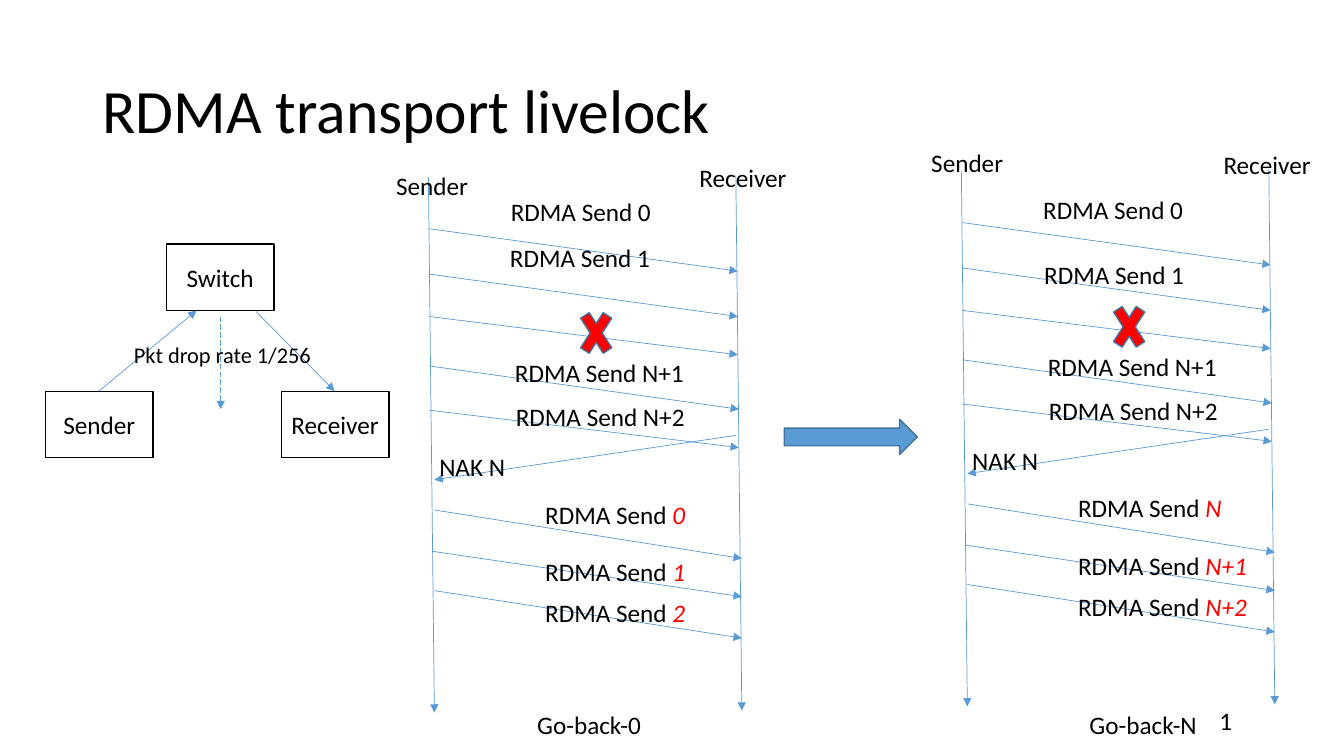
from lxml import etree
from pptx import Presentation
from pptx.dml.color import RGBColor
from pptx.enum.dml import MSO_LINE
from pptx.enum.shapes import MSO_CONNECTOR, MSO_SHAPE
from pptx.enum.text import MSO_ANCHOR, MSO_AUTO_SIZE, PP_ALIGN
from pptx.oxml.ns import qn
from pptx.util import Pt

BLUE = RGBColor(0x5B, 0x9B, 0xD5)
NAVY = RGBColor(0x43, 0x73, 0x9E)
RED = RGBColor(0xFF, 0, 0)
BLACK = RGBColor(0, 0, 0)
WHITE = RGBColor(0xFF, 0xFF, 0xFF)
STRAIGHT = MSO_CONNECTOR.STRAIGHT
RECT, CROSS, ARROW = MSO_SHAPE.RECTANGLE, MSO_SHAPE.MATH_MULTIPLY, MSO_SHAPE.RIGHT_ARROW
MIDDLE, CENTER = MSO_ANCHOR.MIDDLE, PP_ALIGN.CENTER
GROW, DASH = MSO_AUTO_SIZE.SHAPE_TO_FIT_TEXT, MSO_LINE.LONG_DASH
FONT = "Calibri"


def add_label(shapes, left, top, width, text, value="", size=18):
    """Add a one-line label; value follows the text in red italics."""
    box = shapes.add_textbox(Pt(left), Pt(top), Pt(width), Pt(28.8))
    frame = box.text_frame
    frame.word_wrap = False
    frame.auto_size = GROW
    line = frame.paragraphs[0]
    line.font.name, line.font.size = FONT, Pt(size)
    line.font.color.rgb = BLACK
    for part, color in ((text, BLACK), (value, RED)):
        if part:
            run = line.add_run()
            run.text = part
            run.font.name, run.font.size = FONT, Pt(size)
            run.font.color.rgb = color
            run.font.italic = color == RED
    return line


def add_arrow(shapes, x1, y1, x2, y2):
    arrow = shapes.add_connector(STRAIGHT, Pt(x1), Pt(y1), Pt(x2), Pt(y2))
    arrow.line.color.rgb = BLUE
    arrow.line.width = Pt(0.5)
    outline = arrow.line._get_or_add_ln()
    etree.SubElement(outline, qn("a:tailEnd"), type="triangle")
    etree.SubElement(outline.getparent(), qn("a:effectLst"))
    return arrow


deck = Presentation()
deck.slide_width, deck.slide_height = Pt(960), Pt(540)
slide = deck.slides.add_slide(deck.slide_layouts[6])
shapes = slide.shapes

# Title and slide number
title = shapes.add_textbox(Pt(66), Pt(28.8), Pt(828), Pt(104.4)).text_frame
title.word_wrap = True
title.vertical_anchor = MIDDLE
head = title.paragraphs[0]
head.text = "RDMA transport livelock"
head.line_spacing = 0.9
head.font.name, head.font.size = FONT, Pt(44)
head.font.color.rgb = BLACK

number = add_label(shapes, 864, 500.4, 36, "7")
run = number.runs[0]._r
run.tag = qn("a:fld")
run.set("id", "{B6F15528-21DE-4FAA-801E-634DDDAF4B2B}")
run.set("type", "slidenum")

# Network of switch and hosts
for name, left, top in (("Sender", 32.4, 279.5), ("Receiver", 200.9, 279.5),
                        ("Switch", 118.8, 174.2)):
    box = shapes.add_shape(RECT, Pt(left), Pt(top), Pt(77), Pt(47.5))
    box.shadow.inherit = False
    box.fill.solid()
    box.fill.fore_color.rgb = WHITE
    box.line.color.rgb = BLACK
    box.line.width = Pt(1)
    box.text_frame.vertical_anchor = MIDDLE
    line = box.text_frame.paragraphs[0]
    line.text = name
    line.alignment = CENTER
    line.font.name, line.font.size = FONT, Pt(18)
    line.font.color.rgb = BLACK
add_arrow(shapes, 70.6, 279.4, 140.4, 221.8)
add_arrow(shapes, 182.9, 222.5, 239, 279.4)
drop = add_arrow(shapes, 157.7, 226.1, 157.7, 292.3)
drop.line.dash_style = DASH
add_label(shapes, 88.6, 240.5, 142.6, "Pkt drop rate 1/256", size=16)

# Timelines: the second repeats the first, moved by (dx, dy)
ARROWS = (
    (306, 126.7, 310.3, 509), (525.6, 125.3, 529.9, 507.6),
    (306.7, 163.4, 527, 193.7), (306.7, 195.8, 527, 226.1),
    (306.7, 226.1, 527, 253.4), (306.7, 261.4, 527.8, 292.3),
    (306.7, 293, 527.8, 319.7), (525.6, 311, 310.3, 342.7),
    (310.3, 364.3, 529.9, 398.9), (308.9, 393.8, 529.9, 426.2),
    (310.3, 421.9, 529.9, 455.8),
)
LABELS = (
    (360.7, 252, 136.8, "RDMA Send N+1"),
    (361.4, 283, 136.8, "RDMA Send N+2"),
    (306.7, 319, 61.9, "NAK N"),
)
TOPS = (352.8, 393.8, 423.4)
GO_BACK_0 = (
    0, 0, (("0", 118.1), ("1", 115.9), ("2", 115.9)),
    ((357.8, 136.8, 115.9, "RDMA Send 0"), (357.1, 169.9, 115.9, "RDMA Send 1"),
     (275.8, 118.1, 66.2, "Sender"), (492.5, 112.3, 81.4, "Receiver"),
     (376.6, 503.3, 90, "Go-back-0")))
GO_BACK_N = (
    380.7, -4.4, (("N", 118.1), ("N+1", 136.8), ("N+2", 136.8)),
    ((738, 135.4, 115.9, "RDMA Send 0"), (738.7, 181.4, 115.9, "RDMA Send 1"),
     (658.1, 101.5, 66.2, "Sender"), (866.9, 103, 81.4, "Receiver"),
     (771.1, 503.3, 92.9, "Go-back-N")))

marks = []
for dx, dy, resends, places in (GO_BACK_0, GO_BACK_N):
    chart = shapes.add_group_shape().shapes
    for x1, y1, x2, y2 in ARROWS:
        add_arrow(chart, x1 + dx, y1 + dy, x2 + dx, y2 + dy)
    marks.append((chart.add_shape(
        CROSS, Pt(410.4 + dx), Pt(213.8 + dy), Pt(31), Pt(48.2)), RED))
    for left, top, width, text in LABELS:
        add_label(chart, left + dx, top + dy, width, text)
    for top, (value, width) in zip(TOPS, resends):
        add_label(chart, 382.3 + dx, top + dy, width, "RDMA Send ", value)
    for place in places:
        add_label(chart, *place)

marks.append((shapes.add_shape(ARROW, Pt(560.2), Pt(299.5), Pt(95), Pt(25.2)), BLUE))
for mark, color in marks:
    mark.shadow.inherit = False
    mark.fill.solid()
    mark.fill.fore_color.rgb = color
    mark.line.color.rgb = NAVY
    mark.line.width = Pt(1)

deck.save("out.pptx")
